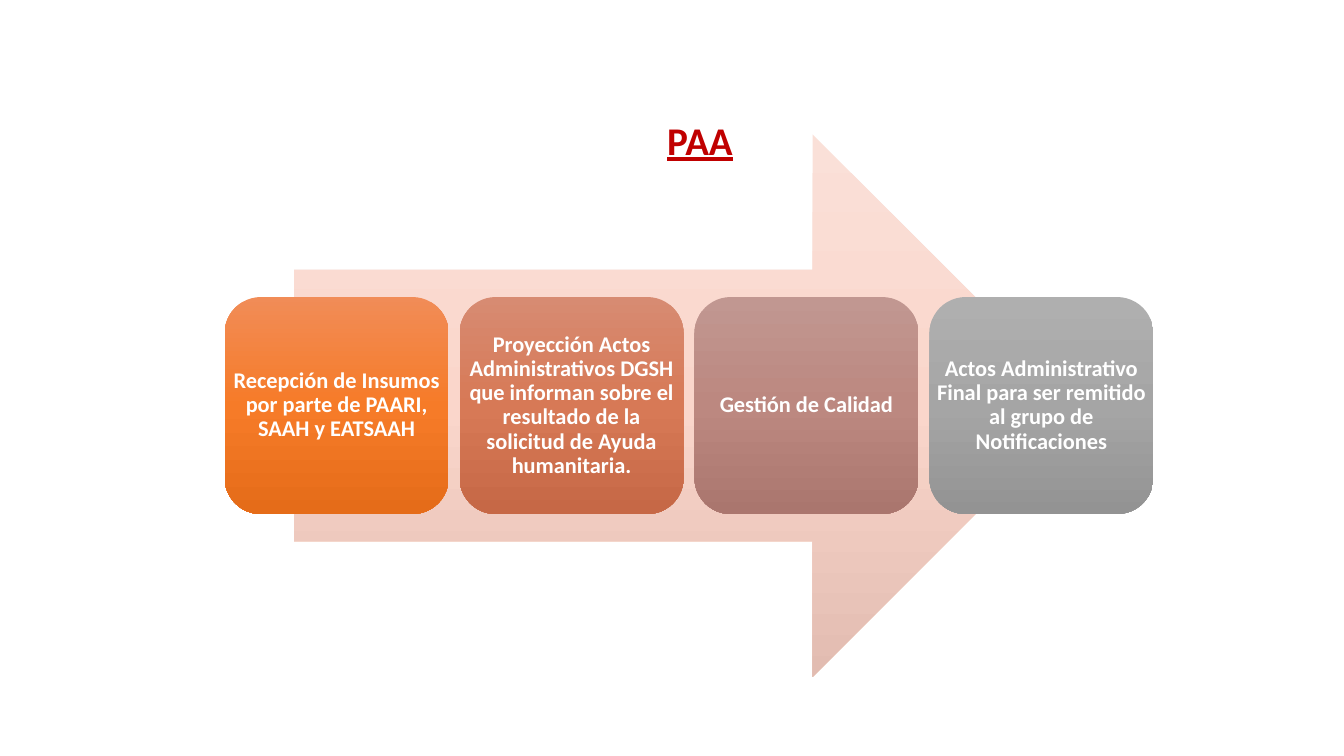
from copy import deepcopy

from pptx import Presentation
from pptx.dml.color import RGBColor
from pptx.enum.shapes import MSO_SHAPE as Shape
from pptx.enum.text import MSO_ANCHOR as Anchor, PP_ALIGN as Align
from pptx.oxml.ns import qn
from pptx.util import Pt

COLOURS = {"title": "C00000", "step_text": "FFFFFF"}
GRADIENTS = {
    "arrow": ("FAE0D8", "FAD6CB", "E2BCB1"),
    "orange": ("F18C57", "F67B28", "E56C19"),
    "terracotta": ("D78B72", "D77956", "C66846"),
    "mauve": ("C19791", "BC8880", "AA766E"),
    "grey": ("AFAFAF", "A5A5A5", "939393"),
}
STEPS = [
    ("orange", "Recepción de Insumos por parte de PAARI, SAAH y EATSAAH"),
    ("terracotta", "Proyección Actos Administrativos DGSH que informan sobre el "
                   "resultado de la solicitud de Ayuda humanitaria."),
    ("mauve", "Gestión de Calidad"),
    ("grey", "Actos Administrativo Final para ser remitido al grupo de Notificaciones"),
]
STEP_LEFT, STEP_TOP = 160.5, 212.2
STEP_WIDTH, STEP_HEIGHT = 160, 155
STEP_PITCH = 167.8


def add_gradient_shape(page, preset, bounds, gradient):
    """Add a borderless shape whose three colours run from top to bottom."""
    shape = page.shapes.add_shape(preset, *map(Pt, bounds))
    shape.shadow.inherit = False
    shape.line.fill.background()
    shape.fill.gradient()
    shape.fill.gradient_angle = 270
    stop_list = next(shape._element.iter(qn("a:gsLst")))
    stop_list.insert(1, deepcopy(stop_list[0]))
    colours = GRADIENTS[gradient]
    for stop, position, colour in zip(shape.fill.gradient_stops, (0, 0.5, 1), colours):
        stop.position = position
        stop.color.rgb = RGBColor.from_string(colour)


def add_text(page, text, bounds, *, size, colour, underline=False, spacing=1.0,
             anchor=Anchor.TOP, margins=(7.2, 3.6)):
    box = page.shapes.add_textbox(*map(Pt, bounds))
    frame = box.text_frame
    frame.word_wrap = True
    frame.vertical_anchor = anchor
    frame.margin_left = frame.margin_right = Pt(margins[0])
    frame.margin_top = frame.margin_bottom = Pt(margins[1])
    para = frame.paragraphs[0]
    para.alignment = Align.CENTER
    para.line_spacing = spacing
    span = para.add_run()
    span.text = text
    span.font.name = "Calibri"
    span.font.size = Pt(size)
    span.font.bold = True
    span.font.underline = underline
    span.font.color.rgb = RGBColor.from_string(COLOURS[colour])


def add_step(page, index, gradient, text):
    bounds = (STEP_LEFT + index * STEP_PITCH, STEP_TOP, STEP_WIDTH, STEP_HEIGHT)
    add_gradient_shape(page, Shape.ROUNDED_RECTANGLE, bounds, gradient)
    add_text(page, text, bounds, size=16, colour="step_text", spacing=0.9,
             anchor=Anchor.MIDDLE, margins=(4.8, 4.8))


def main():
    deck = Presentation()
    deck.slide_width, deck.slide_height = Pt(960), Pt(540)
    page = deck.slides.add_slide(deck.slide_layouts[6])
    add_gradient_shape(page, Shape.RIGHT_ARROW, (209.7, 96, 564.5, 387.5), "arrow")
    for index, (gradient, text) in enumerate(STEPS):
        add_step(page, index, gradient, text)
    add_text(page, "PAA", (387.2, 79.2, 225.4, 41.2), size=28, colour="title",
             underline=True)
    deck.save("out.pptx")


if __name__ == "__main__":
    main()
